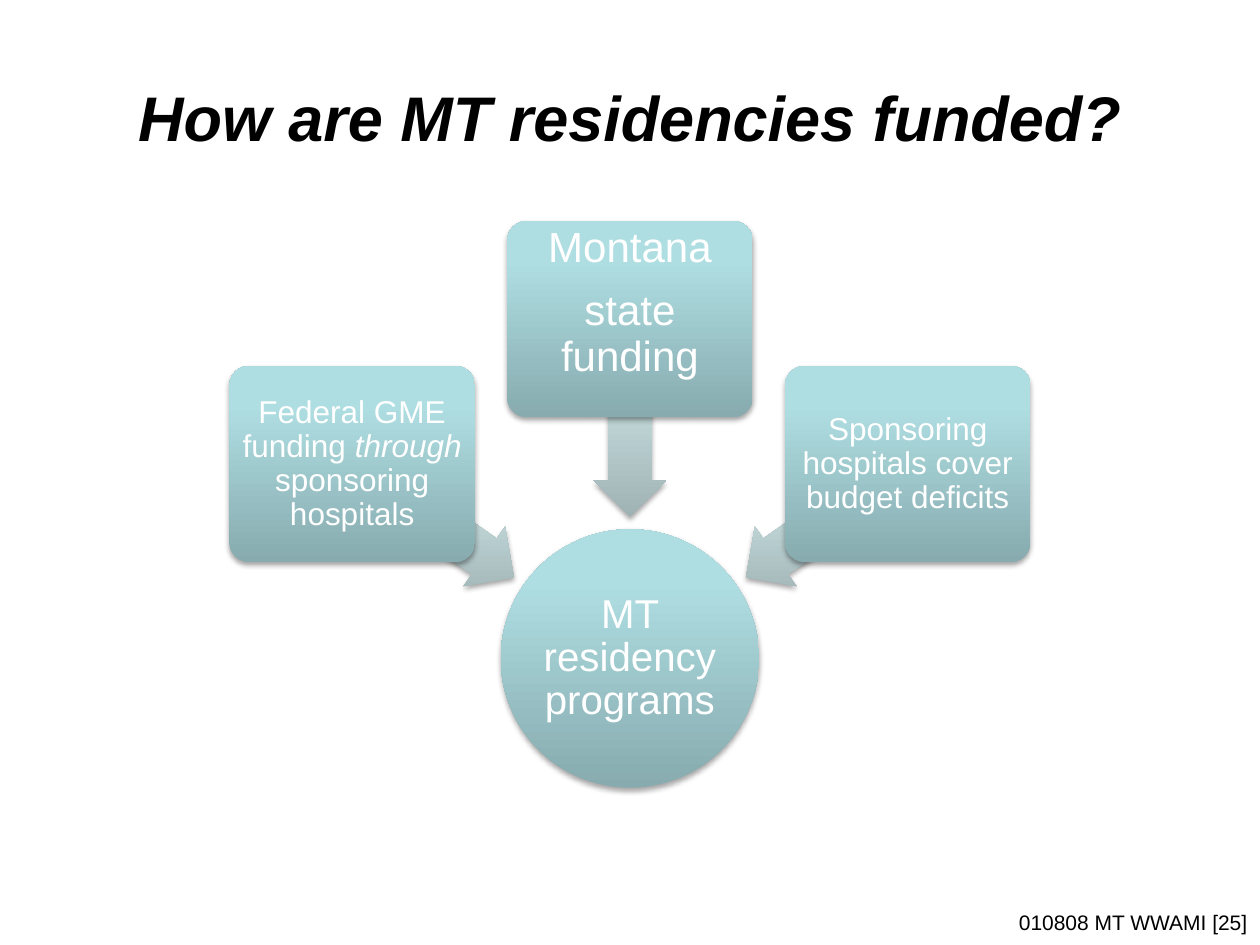
import math

from lxml import etree
from pptx import Presentation
from pptx import util as u
from pptx.dml import color
from pptx.enum import shapes, text
from pptx.oxml import ns

SOLID_STOPS = ((0, "87ABAE"), (80, "AFDEE2"), (100, "AFE0E4"))
PALE_STOPS = ((0, "A0B3B4"), (80, "D0E8EA"), (100, "D0EAEC"))


def rgb(value):
    """Turn a hex string into a colour."""
    return color.RGBColor.from_string(value)


def write(shape, paragraphs, size, fill="000000", bold=False, italic=False,
          align=text.PP_ALIGN.CENTER, anchor=text.MSO_ANCHOR.MIDDLE,
          margins=(0.25, 0.13), spacing=1.0, after=0):
    """Fill a shape with paragraphs, each a list of (wording, italic) runs or a string."""
    frame = shape.text_frame
    frame.word_wrap = True
    frame.vertical_anchor = anchor
    frame.margin_left = frame.margin_right = u.Cm(margins[0])
    frame.margin_top = frame.margin_bottom = u.Cm(margins[1])
    for index, runs in enumerate(paragraphs):
        paragraph = frame.add_paragraph() if index else frame.paragraphs[0]
        paragraph.alignment = align
        paragraph.line_spacing = spacing
        paragraph.space_after = u.Pt(after)
        for wording, slanted in [(runs, italic)] if isinstance(runs, str) else runs:
            run = paragraph.add_run()
            run.text = wording
            run.font.name = "Arial"
            run.font.size = u.Pt(size)
            run.font.bold = bold
            run.font.italic = slanted
            run.font.color.rgb = rgb(fill)


def add_glossy(slide, kind, center, size, stops, rotation=0):
    """Add a shape around a centre with an upward gradient and a soft shadow."""
    (x, y), (width, height) = center, size
    shape = slide.shapes.add_shape(kind, u.Cm(x - width / 2), u.Cm(y - height / 2),
                                   u.Cm(width), u.Cm(height))
    shape.rotation = rotation
    shape.line.fill.background()
    shape.shadow.inherit = False
    properties = shape.fill._xPr
    gradient = etree.Element(ns.qn("a:gradFill"), rotWithShape="0")
    stop_list = etree.SubElement(gradient, ns.qn("a:gsLst"))
    for position, value in stops:
        stop = etree.SubElement(stop_list, ns.qn("a:gs"), pos=str(position * 1000))
        etree.SubElement(stop, ns.qn("a:srgbClr"), val=value)
    etree.SubElement(gradient, ns.qn("a:lin"), ang="16200000", scaled="0")
    properties.find(ns.qn("a:prstGeom")).addnext(gradient)
    shadow = etree.SubElement(properties.find(ns.qn("a:effectLst")), ns.qn("a:outerShdw"),
                              blurRad=str(u.Pt(3.1)), dist=str(u.Pt(1.8)),
                              dir="5400000", rotWithShape="0")
    tint = etree.SubElement(shadow, ns.qn("a:srgbClr"), val="000000")
    etree.SubElement(tint, ns.qn("a:alpha"), val="35000")
    return shape


def add_label(slide, box, wording, **style):
    """Add a text box holding one paragraph."""
    label = slide.shapes.add_textbox(*(u.Cm(length) for length in box))
    write(label, [wording], **style)


def add_funding_diagram(slide, box):
    """Draw the funding sources pointing at the residency programs hub."""
    left, top, width, height = box
    hub_size = 5.21
    hub = (left + width / 2, top + height - hub_size / 2)
    circle = add_glossy(slide, shapes.MSO_SHAPE.OVAL, hub, (hub_size, hub_size), SOLID_STOPS)
    write(circle, ["MT residency programs"], 23, "FFFFFF", margins=(0.05, 0.05), spacing=0.9)
    federal = [[("Federal GME funding ", False), ("through", True),
                (" sponsoring hospitals", False)]]
    sources = (
        (-5.6, -3.92, federal, 18, {}),
        (0, -6.84, ["Montana", "state funding"], 24,
         {"anchor": text.MSO_ANCHOR.TOP, "margins": (0.13, 0), "after": 10}),
        (5.6, -3.92, ["Sponsoring hospitals cover budget deficits"], 18, {}),
    )
    for dx, dy, paragraphs, size, style in sources:
        middle = (hub[0] + dx * 0.71, hub[1] + dy * 0.71)
        angle = math.degrees(math.atan2(-dy, -dx)) + 180
        arrow = add_glossy(slide, shapes.MSO_SHAPE.LEFT_ARROW, middle, (4, 1.47),
                           PALE_STOPS, angle)
        arrow.adjustments[0] = 0.6
        source = add_glossy(slide, shapes.MSO_SHAPE.ROUNDED_RECTANGLE,
                            (hub[0] + dx, hub[1] + dy), (4.95, 3.96), SOLID_STOPS)
        source.adjustments[0] = 0.1
        write(source, paragraphs, size, "FFFFFF", spacing=0.9,
              **{"margins": (0.1, 0.1), **style})


def main():
    """Build and save the slide."""
    presentation = Presentation()
    presentation.slide_width, presentation.slide_height = u.Cm(25.4), u.Cm(19.05)
    slide = presentation.slides.add_slide(presentation.slide_layouts[6])
    add_label(slide, (16.94, 18.21, 8.46, 0.76), "010808 MT WWAMI [25]", size=12,
              align=text.PP_ALIGN.RIGHT, anchor=text.MSO_ANCHOR.TOP)
    add_label(slide, (1.27, 0.76, 22.86, 3.18), "How are MT residencies funded?",
              size=36, bold=True, italic=True)
    add_funding_diagram(slide, (4.62, 4.45, 16.16, 11.43))
    presentation.save("out.pptx")


if __name__ == "__main__":
    main()
